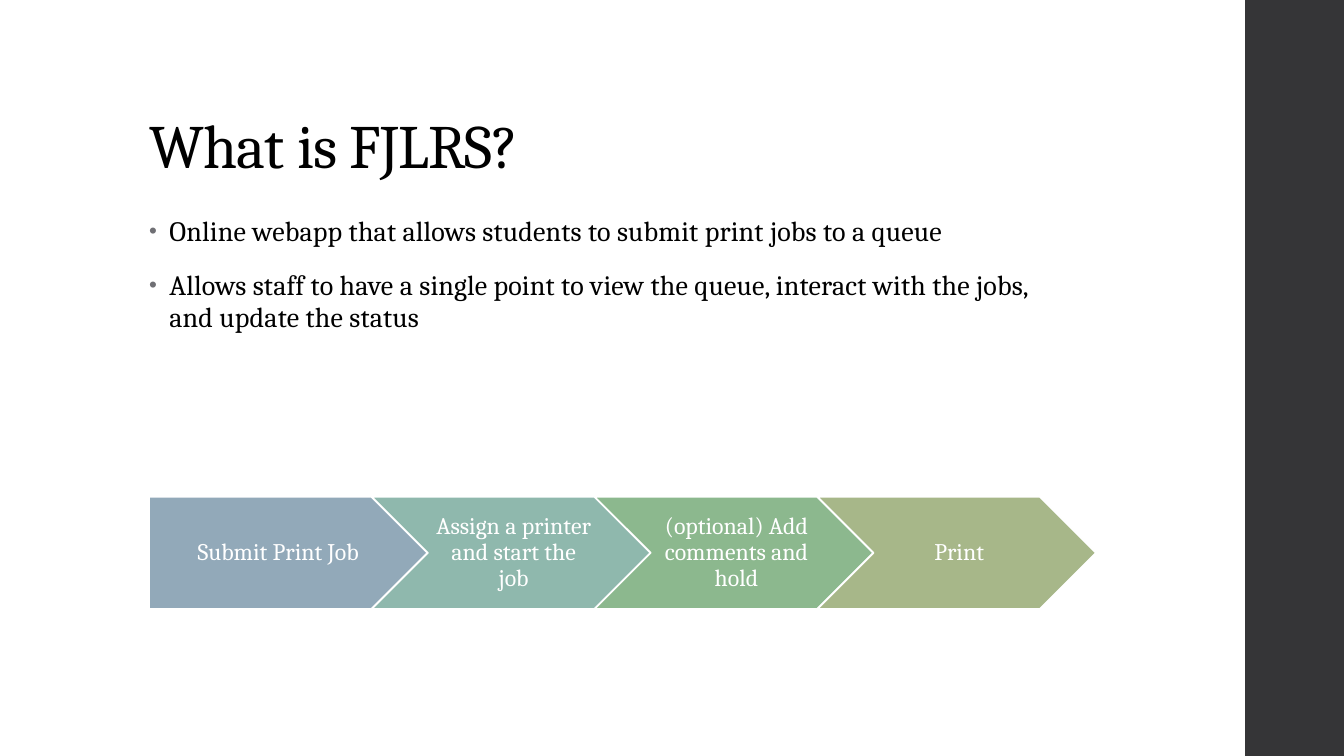
from dataclasses import dataclass

from lxml import etree
from pptx import Presentation
from pptx.dml.color import RGBColor
from pptx.enum.shapes import MSO_SHAPE
from pptx.enum.text import MSO_ANCHOR, MSO_AUTO_SIZE, PP_ALIGN
from pptx.oxml.ns import qn
from pptx.util import Inches, Pt

PENTAGON, CHEVRON = MSO_SHAPE.PENTAGON, MSO_SHAPE.CHEVRON
RECTANGLE = MSO_SHAPE.RECTANGLE
LEFT, CENTER = PP_ALIGN.LEFT, PP_ALIGN.CENTER
TOP, MIDDLE, BOTTOM = MSO_ANCHOR.TOP, MSO_ANCHOR.MIDDLE, MSO_ANCHOR.BOTTOM

FONT = "Cambria"
BLACK = RGBColor(0x00, 0x00, 0x00)
WHITE = RGBColor(0xFF, 0xFF, 0xFF)
CHARCOAL = RGBColor(0x35, 0x35, 0x37)
BULLET_GRAY = RGBColor(0x6F, 0x6F, 0x74)
SLATE = RGBColor(0x92, 0xA9, 0xB9)
TEAL = RGBColor(0x8F, 0xB8, 0xAD)
GREEN = RGBColor(0x8C, 0xB8, 0x8E)
OLIVE = RGBColor(0xA7, 0xB7, 0x89)

STEP_LEFT, STEP_TOP, STEP_PITCH = 1.48, 4.93, 2.21
STEP_WIDTH, STEP_HEIGHT = 2.76, 1.11


@dataclass(frozen=True)
class Step:
    label: str
    color: RGBColor
    outline: MSO_SHAPE = CHEVRON
    inset: float = 0.07


STEPS = [
    Step("Submit Print Job", SLATE, PENTAGON, 0.1),
    Step("Assign a printer and start the job", TEAL),
    Step("(optional) Add comments and hold", GREEN),
    Step("Print", OLIVE),
]
POINTS = [
    "Online webapp that allows students to submit print jobs to a queue",
    "Allows staff to have a single point to view the queue, "
    "interact with the jobs, and update the status",
]


def write(paragraph, text: str, size: float, color: RGBColor, align: PP_ALIGN,
          line_spacing: float, tracking: int = 0) -> None:
    """Add one formatted run; tracking is in hundredths of a point."""
    paragraph.alignment = align
    paragraph.line_spacing = line_spacing
    run = paragraph.add_run()
    run.text = text
    run.font.name = FONT
    run.font.size = Pt(size)
    run.font.color.rgb = color
    if tracking:
        run.font._element.set("spc", str(tracking))


def add_bullet(paragraph) -> None:
    properties = paragraph._p.get_or_add_pPr()
    properties.set("marL", str(Inches(0.2)))
    properties.set("indent", str(Inches(-0.2)))
    bullet_color = etree.SubElement(properties, qn("a:buClr"))
    etree.SubElement(bullet_color, qn("a:srgbClr"), val=str(BULLET_GRAY))
    etree.SubElement(properties, qn("a:buSzPct"), val="80000")
    etree.SubElement(properties, qn("a:buFont"), typeface="Arial")
    etree.SubElement(properties, qn("a:buChar"), char="•")


def place(placeholder, left: float, top: float, width: float, height: float,
          anchor: MSO_ANCHOR):
    """Move a placeholder and return its text frame."""
    placeholder.left, placeholder.top = Inches(left), Inches(top)
    placeholder.width, placeholder.height = Inches(width), Inches(height)
    frame = placeholder.text_frame
    frame.auto_size = MSO_AUTO_SIZE.NONE
    frame.vertical_anchor = anchor
    return frame


def add_block(slide, outline: MSO_SHAPE, left: float, top: float,
              width: float, height: float, color: RGBColor):
    block = slide.shapes.add_shape(outline, Inches(left), Inches(top),
                                   Inches(width), Inches(height))
    block.shadow.inherit = False
    block.fill.solid()
    block.fill.fore_color.rgb = color
    block.line.fill.background()
    return block


def add_step(slide, index: int, step: Step) -> None:
    arrow = add_block(slide, step.outline, STEP_LEFT + index * STEP_PITCH,
                      STEP_TOP, STEP_WIDTH, STEP_HEIGHT, step.color)
    arrow.line.color.rgb = WHITE
    arrow.line.width = Pt(1.1)
    frame = arrow.text_frame
    frame.word_wrap = True
    frame.vertical_anchor = MIDDLE
    frame.margin_left, frame.margin_right = Inches(step.inset), Inches(0.02)
    frame.margin_top = frame.margin_bottom = Inches(0.05)
    write(frame.paragraphs[0], step.label, 17, WHITE, CENTER, 0.9)


def main() -> None:
    presentation = Presentation()
    presentation.slide_width = Inches(13.33)
    presentation.slide_height = Inches(7.5)
    slide = presentation.slides.add_slide(presentation.slide_layouts[1])

    # Side band
    add_block(slide, RECTANGLE, 12.35, 0, 1, 7.5, CHARCOAL)

    # Title
    heading = place(slide.shapes.title, 1.38, 0.4, 10.6, 1.45, BOTTOM)
    write(heading.paragraphs[0], "What is FJLRS?", 44, BLACK, LEFT, 0.9, -50)

    # Bullet list
    summary = place(slide.placeholders[1], 1.38, 2.09, 9.4, 4.76, TOP)
    for index, point in enumerate(POINTS):
        paragraph = summary.add_paragraph() if index else summary.paragraphs[0]
        write(paragraph, point, 20, BLACK, LEFT, 0.95, 10)
        paragraph.space_before, paragraph.space_after = Pt(14), Pt(2)
        add_bullet(paragraph)

    # Process arrows
    for index, step in enumerate(STEPS):
        add_step(slide, index, step)

    presentation.save("out.pptx")


if __name__ == "__main__":
    main()
